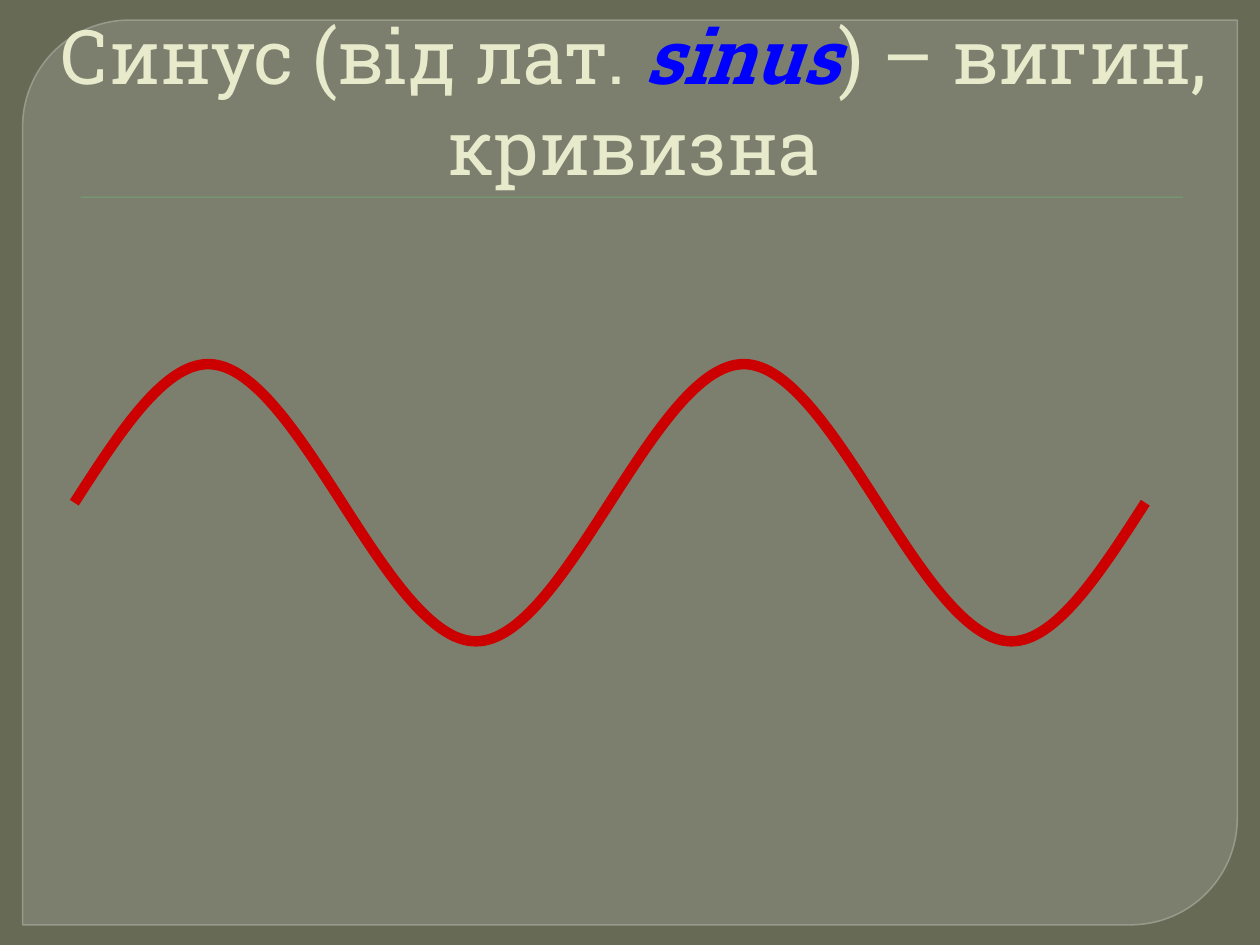
from lxml.etree import SubElement
from pptx import Presentation
from pptx.dml.color import RGBColor
from pptx.enum.shapes import MSO_SHAPE
from pptx.enum.text import MSO_ANCHOR, PP_ALIGN
from pptx.oxml.ns import qn
from pptx.util import Inches, Pt

BACKGROUND = "676A55"
CREAM, BLUE, RED = "E7EACB", "0000FF", "CC0000"
TITLE = [  # text, colour, emphasised
    ("Синус (від лат. ", CREAM, False),
    ("sinus", BLUE, True),
    (") – вигин, кривизна", CREAM, False),
]
WAVE_LEFT, WAVE_AXIS, WAVE_WIDTH = 0.59, 3.99, 8.5
ARCHES, ARCH_HEIGHT = 4, 1.1
# Relative heights of an arch's Bezier points, evenly spaced in x
ARCH_PROFILE = [0, 0.5, 1, 1, 1, 0.5, 0]


def color(value):
    return RGBColor.from_string(value)


def set_opacity(fill, percent):
    rgb = fill._xPr.find(".//" + qn("a:srgbClr"))
    SubElement(rgb, qn("a:alpha"), val=str(percent * 1000))


def add_block(slide, preset, box, fill):
    block = slide.shapes.add_shape(preset, *map(Inches, box))
    block.shadow.inherit = False
    block.fill.solid()
    block.fill.fore_color.rgb = color(fill)
    block.line.fill.background()
    return block


def add_panel(slide):
    panel = add_block(slide, MSO_SHAPE.ROUND_2_DIAG_RECTANGLE,
                      (0.18, 0.16, 9.64, 7.18), "888B7B")
    panel.adjustments[0] = 0.118
    panel.adjustments[1] = 0
    set_opacity(panel.fill, 65)
    panel.line.color.rgb = color("9DA090")
    panel.line.width = Pt(0.87)
    set_opacity(panel.line.fill, 88)


def add_title_rule(slide):
    rule = add_block(slide, MSO_SHAPE.RECTANGLE, (0.64, 1.56, 8.75, 0.01), "72A376")
    effects = rule._element.spPr.find(qn("a:effectLst"))
    shadow = SubElement(effects, qn("a:outerShdw"), blurRad=str(Pt(1)),
                        dist=str(Pt(1)), dir=str(90 * 60000), rotWithShape="0")
    black = SubElement(shadow, qn("a:srgbClr"), val="000000")
    SubElement(black, qn("a:alpha"), val="75000")


def add_title(slide):
    title = slide.shapes.add_textbox(0, 0, Inches(10), Inches(1.56))
    frame = title.text_frame
    frame.word_wrap = True
    frame.vertical_anchor = MSO_ANCHOR.BOTTOM
    paragraph = frame.paragraphs[0]
    paragraph.alignment = PP_ALIGN.CENTER
    paragraph._p.get_or_add_pPr().set("marL", str(Inches(0.06)))
    for text, ink, emphasised in TITLE:
        run = paragraph.add_run()
        run.text = text
        run.font.name = "Roboto Slab"
        run.font.size = Pt(43)
        run.font.bold = run.font.italic = emphasised
        run.font.color.rgb = color(ink)


def curve_segments(shape):
    """Turn every three straight segments of the outline into one Bezier curve."""
    outline = shape._element.find(".//" + qn("a:path"))
    segments = outline.findall(qn("a:lnTo"))
    for first in range(0, len(segments), 3):
        curve = SubElement(outline, qn("a:cubicBezTo"))
        for segment in segments[first:first + 3]:
            curve.append(segment.find(qn("a:pt")))
            outline.remove(segment)


def add_arch(slide, index):
    """Draw one half period of the sine wave; odd ones hang below the axis."""
    height = -ARCH_HEIGHT if index % 2 else ARCH_HEIGHT
    width = WAVE_WIDTH / ARCHES
    step = width / (len(ARCH_PROFILE) - 1)
    points = [
        (Inches(WAVE_LEFT + width * index + step * number),
         Inches(WAVE_AXIS - height * level))
        for number, level in enumerate(ARCH_PROFILE)
    ]
    builder = slide.shapes.build_freeform(*points[0])
    builder.add_line_segments(points[1:], close=False)
    arch = builder.convert_to_shape()
    curve_segments(arch)
    arch.shadow.inherit = False
    arch.fill.background()
    arch.line.color.rgb = color(RED)
    arch.line.width = Pt(6)


def main():
    deck = Presentation()
    deck.slide_width, deck.slide_height = Inches(10), Inches(7.5)
    slide = deck.slides.add_slide(deck.slide_layouts[6])
    slide.background.fill.solid()
    slide.background.fill.fore_color.rgb = color(BACKGROUND)
    add_panel(slide)
    add_title_rule(slide)
    add_title(slide)
    for index in range(ARCHES):
        add_arch(slide, index)
    deck.save("out.pptx")


if __name__ == "__main__":
    main()
